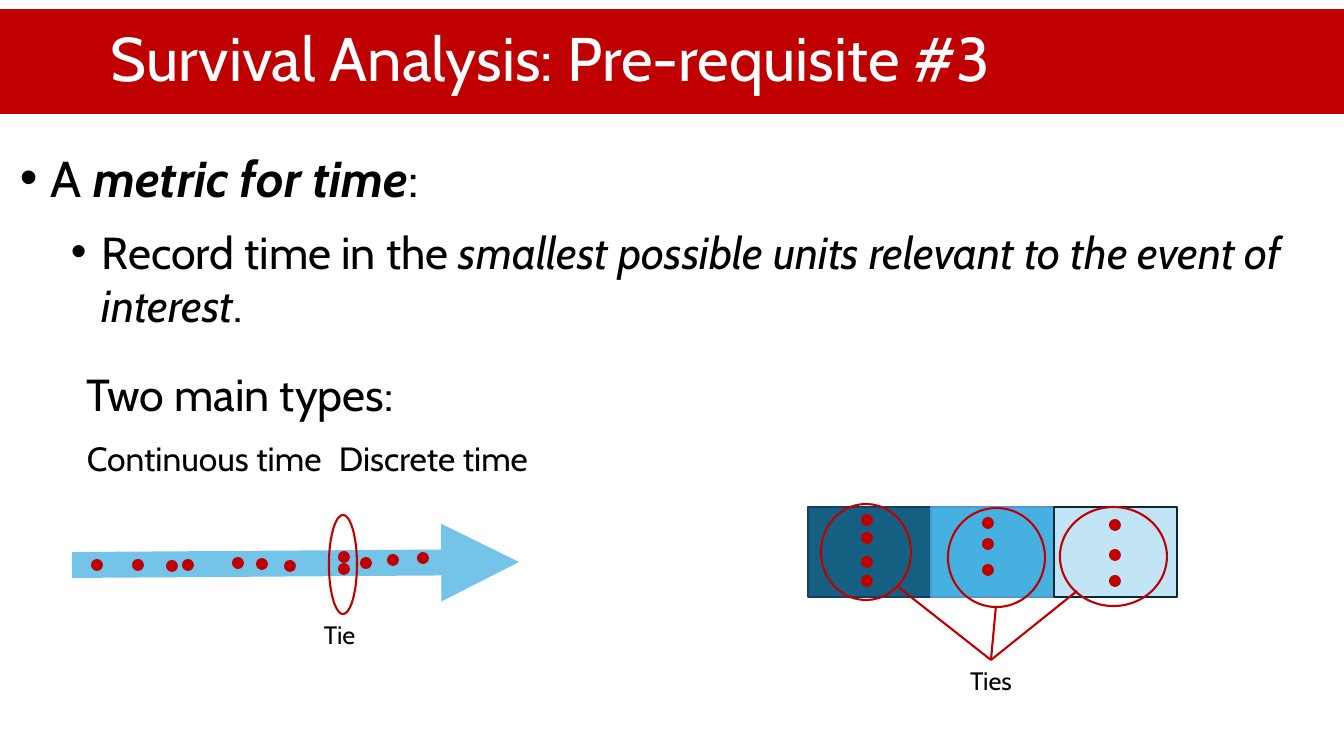
from lxml import etree
from pptx import Presentation
from pptx import util as u
from pptx.dml.color import RGBColor
from pptx.enum import shapes, text
from pptx.oxml.ns import qn

COLOURS = {
    "red": "C00000", "white": "FFFFFF", "black": "000000", "arrow": "74C3E9",
    "dark": "156082", "dark edge": "163E64", "mid": "46B1E1",
    "mid edge": "4E95D9", "pale": "C1E5F5", "pale edge": "092A39",
}
FONT = "Cabin"
DOT = 12


def px(length):
    return u.Emu(round(length * 914400 / 100.8))


def colour(name):
    return RGBColor.from_string(COLOURS[name])


def add_shape(page, kind, left, top, width, height, fill=None, line=None):
    shape = page.shapes.add_shape(kind, px(left), px(top), px(width), px(height))
    shape.shadow.inherit = False
    if fill:
        shape.fill.solid()
        shape.fill.fore_color.rgb = colour(fill)
    else:
        shape.fill.background()
    if line:
        shape.line.color.rgb = colour(line)
        shape.line.width = u.Pt(1.5)
    else:
        shape.line.fill.background()
    return shape


def add_dot(page, x, y):
    """Draw one event centred on (x, y)."""
    add_shape(page, shapes.MSO_SHAPE.OVAL, x - DOT / 2, y - DOT / 2, DOT, DOT, fill="red")


def add_ring(page, left, top, width, height):
    add_shape(page, shapes.MSO_SHAPE.OVAL, left, top, width, height, line="red")


def add_line(page, start, end, name, width):
    line = page.shapes.add_connector(shapes.MSO_CONNECTOR.STRAIGHT,
                                     *map(px, (*start, *end)))
    line.line.color.rgb = colour(name)
    line.line.width = u.Pt(width)
    etree.SubElement(line._element.spPr, qn("a:effectLst"))
    return line


def add_text_box(page, left, top, width, height):
    box = page.shapes.add_textbox(px(left), px(top), px(width), px(height))
    box.text_frame.word_wrap = True
    return box.text_frame


def style(para, size, name="black"):
    para.font.name = FONT
    para.font.size = u.Pt(size)
    para.font.color.rgb = colour(name)


def indent(para, margin, hanging=0):
    """Set the left margin; a hanging indent also gets a bullet."""
    props = para._p.get_or_add_pPr()
    props.set("marL", str(px(margin)))
    props.set("indent", str(-px(hanging)))
    if hanging:
        etree.SubElement(props, qn("a:buFont")).set("typeface", "Arial")
        etree.SubElement(props, qn("a:buChar")).set("char", "•")


def add_title(page, left, top, width, height):
    title = page.shapes.title
    title.left, title.top, title.width, title.height = map(px, (left, top, width, height))
    title.fill.solid()
    title.fill.fore_color.rgb = colour("red")
    frame = title.text_frame
    frame.text = "Survival Analysis: Pre-requisite #3"
    frame.auto_size = text.MSO_AUTO_SIZE.NONE
    frame.vertical_anchor = text.MSO_ANCHOR.MIDDLE
    frame.margin_left = px(111)
    para = frame.paragraphs[0]
    para.alignment = text.PP_ALIGN.LEFT
    para.line_spacing = 0.9
    style(para, 44, "white")


def add_bullets(page, left, top, width, height):
    frame = add_text_box(page, left, top, width, height)
    bullets = [
        (36, 31, "A ", "metric for time", True, ":"),
        (32, 82, "Record time in the ",
         "smallest possible units relevant to the event of interest", False, "."),
    ]
    for level, (size, margin, before, stress, bold, after) in enumerate(bullets):
        para = frame.add_paragraph() if level else frame.paragraphs[0]
        para.level = level
        para.space_before = u.Pt(12)
        indent(para, margin, 31)
        style(para, size)
        for words in (before, stress, after):
            span = para.add_run()
            span.text = words
            if words == stress:
                span.font.italic = True
                span.font.bold = bold


def add_type_headings(page, left, top, width, height):
    frame = add_text_box(page, left, top, width, height)
    heading, names = frame.paragraphs[0], frame.add_paragraph()
    heading.text = "Two main types:"
    names.text = "Continuous time\tDiscrete time"
    for para, size in ((heading, 32), (names, 24)):
        para.level = 1
        para.space_before = u.Pt(12)
        indent(para, 50)
        style(para, size)
    tabs = etree.SubElement(names._p.pPr, qn("a:tabLst"))
    etree.SubElement(tabs, qn("a:tab"), pos=str(px(857)), algn="l")
    names._p.pPr.find(qn("a:defRPr")).addprevious(tabs)


def add_label(page, words, left, top, width, height, align):
    para = add_text_box(page, left, top, width, height).paragraphs[0]
    para.text = words
    para.alignment = align
    style(para, 18)


def add_continuous_time(page, left, top):
    arrow = add_line(page, (left, top + 50), (left + 447, top + 47), "arrow", 18.5)
    etree.SubElement(arrow.line._get_or_add_ln(), qn("a:tailEnd"), type="triangle")
    events = [(25, 50), (66, 50), (100, 51), (116, 50), (166, 48), (190, 49),
              (218, 51), (272, 42), (272, 54), (294, 48), (321, 45), (351, 43)]
    for x, y in events:
        add_dot(page, left + x, top + y)
    add_ring(page, left + 257, top, 28, 99)
    add_label(page, "Tie", left + 242, top + 99, 60, 40, text.PP_ALIGN.LEFT)


def add_discrete_time(page, left, top):
    cell_width, cell_height = 123, 90
    meeting = (left + 183, top + 153)
    # fill, events' x and ys, ring box, leader start: all relative to the cell
    cells = [
        ("dark", 59, (13, 31, 55, 74), (13, -3, 90, 96), (89, 79)),
        ("mid", 57, (16, 37, 63), (17, 1, 97, 99), (65, 99)),
        ("pale", 61, (18, 48, 74), (6, 0, 107, 99), (23, 84)),
    ]
    for index, (fill, *_) in enumerate(cells):
        add_shape(page, shapes.MSO_SHAPE.RECTANGLE, left + index * cell_width, top,
                  cell_width, cell_height, fill, f"{fill} edge")
    for index, (_, x, ys, ring, start) in enumerate(cells):
        cell_left = left + index * cell_width
        for y in ys:
            add_dot(page, cell_left + x, top + y)
        add_ring(page, cell_left + ring[0], top + ring[1], *ring[2:])
        add_line(page, (cell_left + start[0], top + start[1]), meeting, "red", 1.5)
    add_label(page, "Ties", meeting[0] - 50, meeting[1], 100, 40, text.PP_ALIGN.CENTER)


def main():
    deck = Presentation()
    deck.slide_width, deck.slide_height = px(1344), px(756)
    page = deck.slides.add_slide(deck.slide_layouts[5])
    add_title(page, 0, 9, 1344, 105)
    add_bullets(page, 10, 142, 1324, 475)
    add_type_headings(page, 27, 362, 1324, 179)
    add_continuous_time(page, 72, 515)
    add_discrete_time(page, 808, 507)
    deck.save("out.pptx")


if __name__ == "__main__":
    main()
